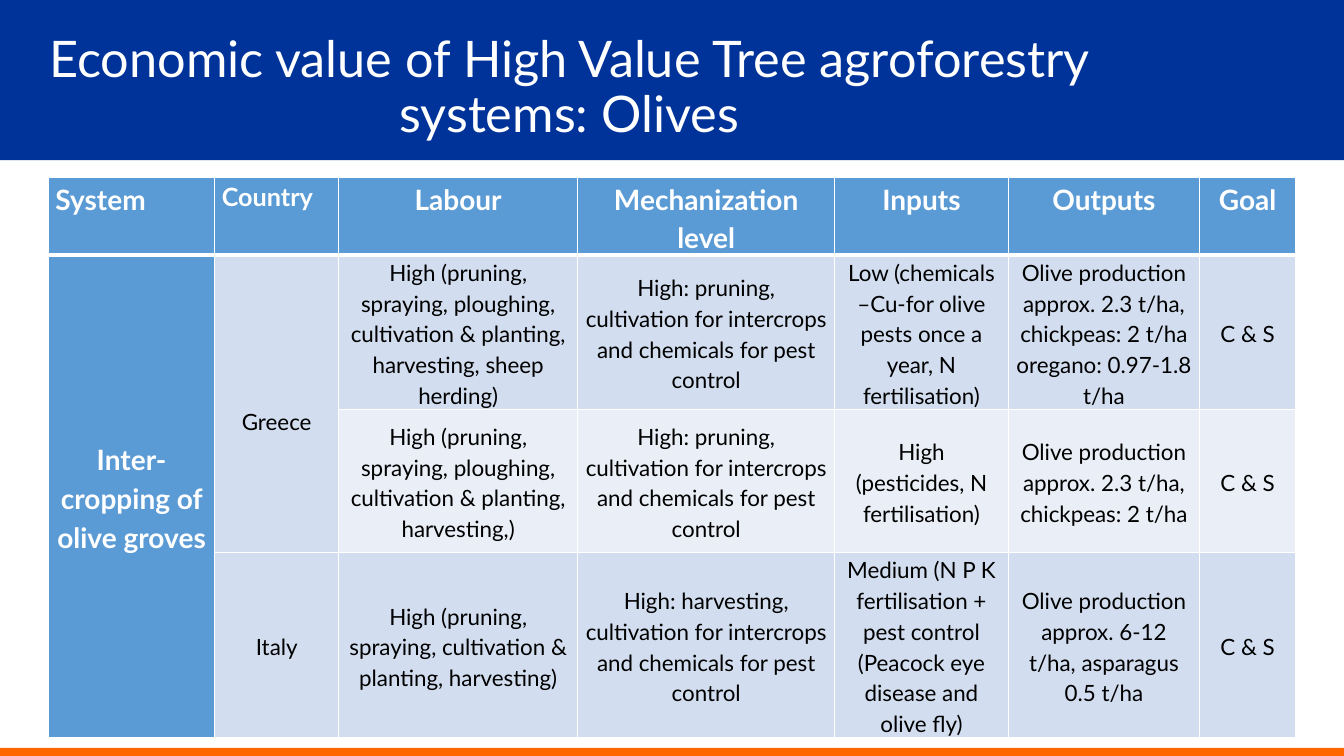
from lxml import etree
from pptx import Presentation
from pptx import util as u
from pptx.dml.color import RGBColor
from pptx.enum import shapes, text
from pptx.oxml import ns

COLORS = {"navy": "003399", "orange": "FF6600", "blue": "5B9BD5", "band": "D2DEEF",
          "light": "EAEFF7", "white": "FFFFFF", "black": "000000"}
FONT = "Lato"


def style_text(paragraph, size, color, bold, align, spacing):
    paragraph.alignment = align
    paragraph.line_spacing = spacing
    for run in paragraph.runs:
        run.font.name = FONT
        run.font.size = u.Pt(size)
        run.font.bold = bold
        run.font.color.rgb = RGBColor.from_string(COLORS[color])


def add_border(cell, side, points):
    line = etree.SubElement(cell._tc.get_or_add_tcPr(), ns.qn(f"a:ln{side}"), w=str(u.Pt(points)))
    fill = etree.SubElement(line, ns.qn("a:solidFill"))
    etree.SubElement(fill, ns.qn("a:srgbClr"), val=COLORS["white"])


prs = Presentation()
prs.slide_width = u.Inches(13.33)
prs.slide_height = u.Inches(7.5)
slide = prs.slides.add_slide(prs.slide_layouts[6])

for top, height, color in [(0, 1.59, "navy"), (7.42, 0.08, "orange")]:
    band = slide.shapes.add_shape(shapes.MSO_SHAPE.RECTANGLE, 0, u.Inches(top),
                                  prs.slide_width, u.Inches(height))
    band.shadow.inherit = False
    band.fill.solid()
    band.fill.fore_color.rgb = RGBColor.from_string(COLORS[color])
    band.line.fill.background()

title = slide.shapes.add_textbox(u.Inches(0.19), u.Inches(0.39), u.Inches(10.91), u.Inches(0.98))
title.text_frame.word_wrap = True
title.text_frame.vertical_anchor = text.MSO_ANCHOR.MIDDLE
title.text_frame.text = "Economic value of High Value Tree agroforestry systems: Olives"
style_text(title.text_frame.paragraphs[0], 36, "white", False, text.PP_ALIGN.CENTER, 0.9)

systems = [
    ["System", "Country", "Labour", "Mechanization level", "Inputs", "Outputs", "Goal"],
    ["Inter-cropping of olive groves", "Greece",
     "High (pruning, spraying, ploughing, cultivation & planting, harvesting, sheep herding)",
     "High: pruning, cultivation for intercrops and chemicals for pest control",
     "Low (chemicals –Cu-for olive pests once a year, N fertilisation)",
     "Olive production approx. 2.3 t/ha, chickpeas: 2 t/ha oregano: 0.97-1.8 t/ha", "C & S"],
    ["", "", "High (pruning, spraying, ploughing, cultivation & planting, harvesting,)",
     "High: pruning, cultivation for intercrops and chemicals for pest control",
     "High (pesticides, N fertilisation)",
     "Olive production approx. 2.3 t/ha, chickpeas: 2 t/ha", "C & S"],
    ["", "Italy", "High (pruning, spraying, cultivation & planting, harvesting)",
     "High: harvesting, cultivation for intercrops and chemicals for pest control",
     "Medium (N P K fertilisation + pest control (Peacock eye disease and olive fly)",
     "Olive production approx. 6-12 t/ha, asparagus 0.5 t/ha", "C & S"],
]
widths = [1.65, 1.23, 2.37, 2.55, 1.72, 1.9, 0.95]
heights = [0.77, 1.52, 1.42, 1.83]

table = slide.shapes.add_table(len(heights), len(widths), u.Inches(0.48), u.Inches(1.76),
                               u.Inches(sum(widths)), u.Inches(sum(heights))).table
table.first_col = True
for column, width in zip(table.columns, widths):
    column.width = u.Inches(width)
for row, height in zip(table.rows, heights):
    row.height = u.Inches(height)

for r, entries in enumerate(systems):
    for c, entry in enumerate(entries):
        cell = table.cell(r, c)
        heading = r == 0 or c == 0
        for side in "LRTB":
            under_header = (r, side) in [(0, "B"), (1, "T")]
            add_border(cell, side, 3 if under_header else 1)
        cell.fill.solid()
        fill = "blue" if heading else "light" if r == 2 and c > 1 else "band"
        cell.fill.fore_color.rgb = RGBColor.from_string(COLORS[fill])
        cell.margin_left = cell.margin_right = u.Inches(0.07)
        cell.margin_top = u.Inches(0.31 if entry == "Greece" else 0)
        cell.margin_bottom = 0
        cell.vertical_anchor = text.MSO_ANCHOR.TOP if r == 0 else text.MSO_ANCHOR.MIDDLE
        cell.text_frame.text = entry
        size = 18 if entry == "Country" else 20 if heading else 16
        align = text.PP_ALIGN.LEFT if r == 0 and c < 2 else text.PP_ALIGN.CENTER
        style_text(cell.text_frame.paragraphs[0], size, "white" if heading else "black",
                   heading, align, 1.15)

table.cell(1, 0).merge(table.cell(3, 0))
table.cell(1, 1).merge(table.cell(2, 1))

prs.save("out.pptx")
